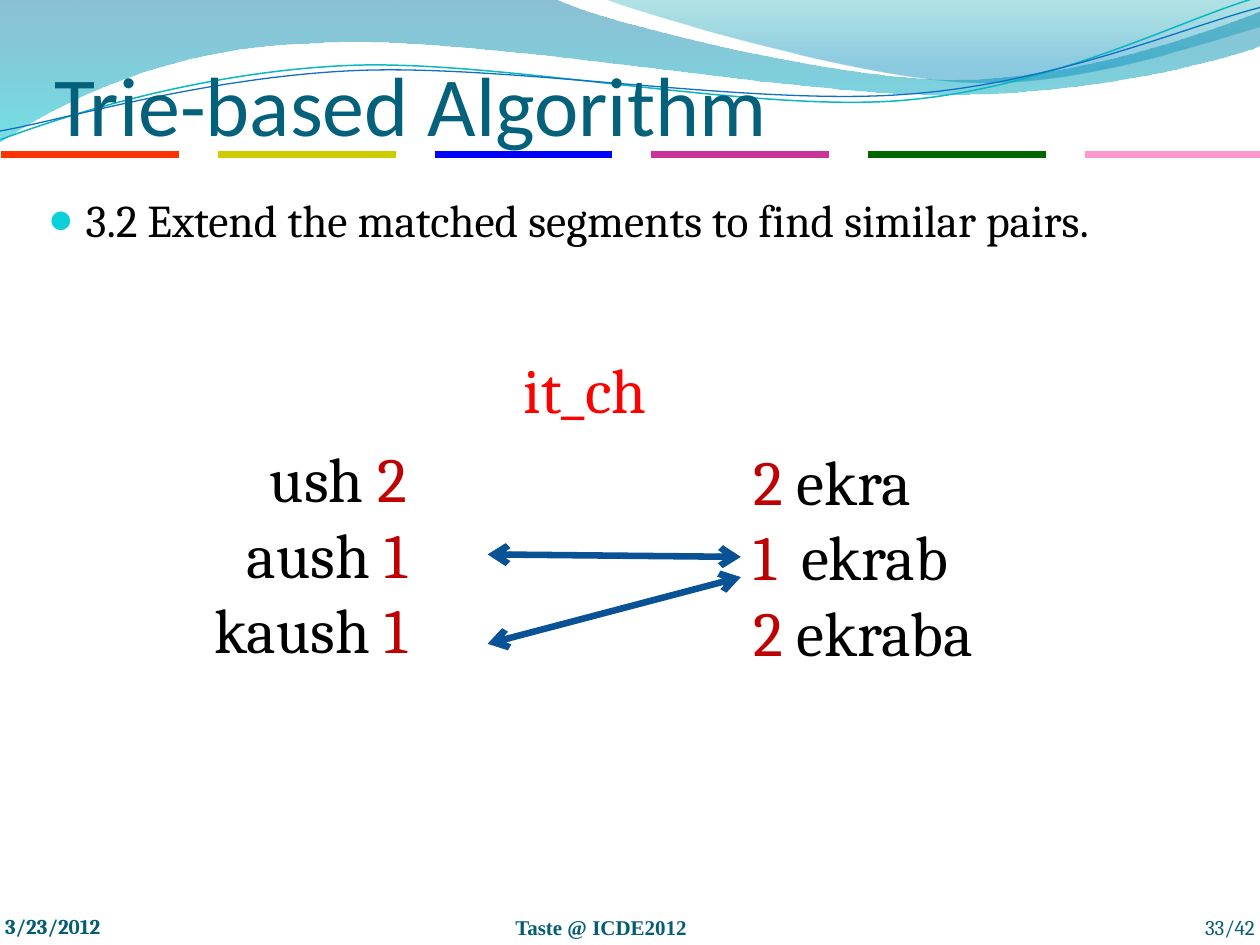
from lxml.etree import SubElement
from pptx import Presentation
from pptx.dml.color import RGBColor
from pptx.enum.shapes import MSO_CONNECTOR
from pptx.enum.text import MSO_ANCHOR, MSO_AUTO_SIZE, PP_ALIGN
from pptx.oxml import parse_xml
from pptx.oxml.ns import nsdecls, qn
from pptx.util import Inches, Pt

BLACK = RGBColor(0x00, 0x00, 0x00)
RED = RGBColor(0xFF, 0x00, 0x00)
DARK_RED = RGBColor(0xC0, 0x00, 0x00)
TITLE_TEAL = RGBColor(0x04, 0x61, 0x7B)
FOOTER_TEAL = RGBColor(0x04, 0x5D, 0x75)
ARROW_BLUE = RGBColor(0x09, 0x52, 0x95)
CURVE_TEAL = RGBColor(0x0A, 0xB8, 0xBF)
CURVE_BLUE = RGBColor(0x0F, 0x6F, 0xC6)
BAR_COLORS = [RGBColor.from_string(code) for code in
              ("FF3300", "CCCC00", "0000FF", "CC3399", "006600", "FF99CC")]

TITLE = "Trie-based Algorithm"
BULLET = "3.2 Extend the matched segments to find similar pairs."
RED_WORD = "it_ch"
LEFT_SEGMENTS = [("ush ", "2"), ("aush ", "1"), ("kaush ", "1")]
RIGHT_SEGMENTS = [("2 ", "ekra"), ("1\t", "ekrab"), ("2 ", "ekraba")]
FOOTERS = [
    ("3/23/2012", (0.04, 7.05, 2.33, 0.4), "Cambria", True, PP_ALIGN.LEFT),
    ("Taste @ ICDE2012", (4.09, 7.06, 3.67, 0.4), "Times New Roman", True, PP_ALIGN.LEFT),
    ("33/42", (9.13, 7.06, 0.83, 0.4), "Cambria", False, PP_ALIGN.RIGHT),
]
ARROWS = [((3.87, 4.4), (5.88, 4.42)), ((3.87, 5.11), (5.88, 4.58))]

# A pair is a straight step; six numbers are a Bezier step.
WAVES = [
    ([(0, 0), (4.4, -0.01), (4.76, 0.17, 6.64, 0.63, 7.58, 0.63),
      (8.53, 0.63, 9.58, 0.26, 10, 0.09), (10.01, 0.36),
      (9.83, 0.44, 8.7, 0.76, 7.46, 0.75), (6.22, 0.75, 3.82, 0.28, 2.57, 0.34),
      (1.29, 0.36, 0.46, 0.83, -0.01, 1.13)],
     [(0, "0074A1", 45), (100, "00C6CF", 55)]),
    ([(4.79, -0.01), (5.09, 0.11, 6.82, 0.62, 7.69, 0.65),
      (8.56, 0.69, 9.61, 0.32, 10, 0.21), (10, 0)],
     [(0, "00A1A9", 30), (80, "008BBF", 45)]),
]
CURVES = [
    ([(0, 1.11), (0.48, 0.93, 1.58, 0.57, 2.77, 0.52),
      (3.95, 0.47, 5.93, 0.89, 7.13, 0.8), (8.33, 0.71, 9.38, 0.15, 9.98, -0.02)],
     CURVE_TEAL, 0.85),
    ([(0, 1.04), (0.47, 0.96, 1.64, 0.61, 2.83, 0.56),
      (4.03, 0.51, 5.97, 0.84, 7.17, 0.75), (8.36, 0.67, 9.41, 0.21, 10, 0.06)],
     CURVE_BLUE, 0.75),
]


def add_outline(slide, steps, close):
    """Draw a freeform through the steps, bending the Bezier ones."""
    anchors = [(Inches(step[-2]), Inches(step[-1])) for step in steps]
    builder = slide.shapes.build_freeform(*anchors[0])
    builder.add_line_segments(anchors[1:], close=close)
    shape = builder.convert_to_shape()
    shape.shadow.inherit = False
    segments = list(shape._element.spPr.iter(qn("a:lnTo")))
    for step, segment in zip(steps[1:], segments):
        if len(step) == 6:
            segment.tag = qn("a:cubicBezTo")
            for index, (x, y) in enumerate((step[:2], step[2:4])):
                point = parse_xml(f'<a:pt {nsdecls("a")} x="{Inches(x) - shape.left}" '
                                  f'y="{Inches(y) - shape.top}"/>')
                segment.insert(index, point)
    return shape


def add_wave(slide, steps, stops):
    """Draw a translucent wave with a vertical gradient."""
    shape = add_outline(slide, steps, True)
    shape.line.fill.background()
    stop_xml = "".join(
        f'<a:gs pos="{position * 1000}"><a:srgbClr val="{color}">'
        f'<a:alpha val="{alpha * 1000}"/></a:srgbClr></a:gs>'
        for position, color, alpha in stops)
    gradient = parse_xml(f'<a:gradFill {nsdecls("a")}><a:gsLst>{stop_xml}</a:gsLst>'
                         '<a:lin ang="5400000" scaled="0"/></a:gradFill>')
    shape._element.spPr.find(qn("a:custGeom")).addnext(gradient)


def add_curve(slide, steps, color, width):
    """Draw an open curved line."""
    shape = add_outline(slide, steps, False)
    shape.fill.background()
    shape.line.color.rgb = color
    shape.line.width = Pt(width)


def add_line(slide, start, end, color, width, arrows=False):
    """Draw a straight connector, with arrowheads at both ends if asked."""
    line = slide.shapes.add_connector(
        MSO_CONNECTOR.STRAIGHT, *(Inches(value) for value in start + end))
    line.line.color.rgb = color
    line.line.width = Pt(width)
    if arrows:
        for tag in ("a:headEnd", "a:tailEnd"):
            SubElement(line.line._get_or_add_ln(), qn(tag), type="arrow")
    SubElement(line._element.spPr, qn("a:effectLst"))


def place(shape, box):
    """Move and size a shape in inches."""
    shape.left, shape.top, shape.width, shape.height = map(Inches, box)


def style(paragraph, size, name, color=None, bold=False):
    """Set the font of a whole paragraph."""
    font = paragraph.font
    font.size, font.name, font.bold = Pt(size), name, bold
    if color is not None:
        font.color.rgb = color


def add_text(slide, box, rows, size, name="Cambria", bold=False,
             align=PP_ALIGN.LEFT, tab=None):
    """Add a text box whose rows are lists of (text, color) runs."""
    frame = slide.shapes.add_textbox(*map(Inches, box)).text_frame
    frame.word_wrap = True
    for index, row in enumerate(rows):
        paragraph = frame.add_paragraph() if index else frame.paragraphs[0]
        paragraph.alignment = align
        if tab:
            tabs = SubElement(paragraph._p.get_or_add_pPr(), qn("a:tabLst"))
            SubElement(tabs, qn("a:tab"), pos=str(Inches(tab)), algn="l")
        style(paragraph, size, name, bold=bold)
        for text, color in row:
            run = paragraph.add_run()
            run.text = text
            run.font.color.rgb = color
    return frame


def fill_title(shape):
    """Fill the title placeholder."""
    place(shape, (0.43, -0.03, 9, 1.25))
    frame = shape.text_frame
    frame.text = TITLE
    frame.auto_size = MSO_AUTO_SIZE.NONE
    frame.vertical_anchor = MSO_ANCHOR.BOTTOM
    frame.margin_left = frame.margin_right = frame.margin_bottom = 0
    frame.paragraphs[0].alignment = PP_ALIGN.LEFT
    style(frame.paragraphs[0], 48, "Calibri", TITLE_TEAL)


def fill_body(shape):
    """Fill the body placeholder with its bullet."""
    place(shape, (0.28, 1.47, 10.09, 4.8))
    frame = shape.text_frame
    frame.text = BULLET
    frame.auto_size = MSO_AUTO_SIZE.NONE
    paragraph = frame.paragraphs[0]
    paragraph.space_before = Pt(0)
    properties = paragraph._p.get_or_add_pPr()
    properties.set("marL", str(Inches(0.3)))
    properties.set("indent", str(-Inches(0.3)))
    bullet_color = SubElement(properties, qn("a:buClr"))
    SubElement(bullet_color, qn("a:srgbClr"), val="0BD0D9")
    SubElement(properties, qn("a:buSzPct"), val="95000")
    SubElement(properties, qn("a:buChar"), char="●")
    style(paragraph, 26, "Cambria", BLACK)


def main():
    """Build the slide and save it."""
    presentation = Presentation()
    presentation.slide_width, presentation.slide_height = Inches(10), Inches(7.5)
    slide = presentation.slides.add_slide(presentation.slide_layouts[1])
    title, body = slide.placeholders

    for steps, stops in WAVES:
        add_wave(slide, steps, stops)
    for steps, color, width in CURVES:
        add_curve(slide, steps, color, width)
    for index, color in enumerate(BAR_COLORS):
        left = 0.01 + 1.72 * index
        add_line(slide, (left, 1.23), (left + 1.41, 1.23), color, 4)

    fill_title(title)
    fill_body(body)
    for placeholder in (title, body):
        slide.shapes._spTree.append(placeholder._element)

    for text, box, name, bold, align in FOOTERS:
        frame = add_text(slide, box, [[(text, FOOTER_TEAL)]], 12, name, bold, align)
        frame.vertical_anchor = MSO_ANCHOR.BOTTOM
        frame.margin_left = frame.margin_right = frame.margin_top = frame.margin_bottom = 0

    left_rows = [[(word, BLACK), (count, DARK_RED)] for word, count in LEFT_SEGMENTS]
    right_rows = [[(count, DARK_RED), (word, BLACK)] for count, word in RIGHT_SEGMENTS]
    add_text(slide, (-1.14, 3.44, 4.47, 1.92), left_rows, 36, align=PP_ALIGN.RIGHT)
    add_text(slide, (5.88, 3.46, 2.19, 1.92), right_rows, 36, tab=0.38)
    add_text(slide, (4.06, 2.73, 1.83, 0.71), [[(RED_WORD, RED)]], 36)
    for start, end in ARROWS:
        add_line(slide, start, end, ARROW_BLUE, 3.75, arrows=True)

    presentation.save("out.pptx")


if __name__ == "__main__":
    main()
